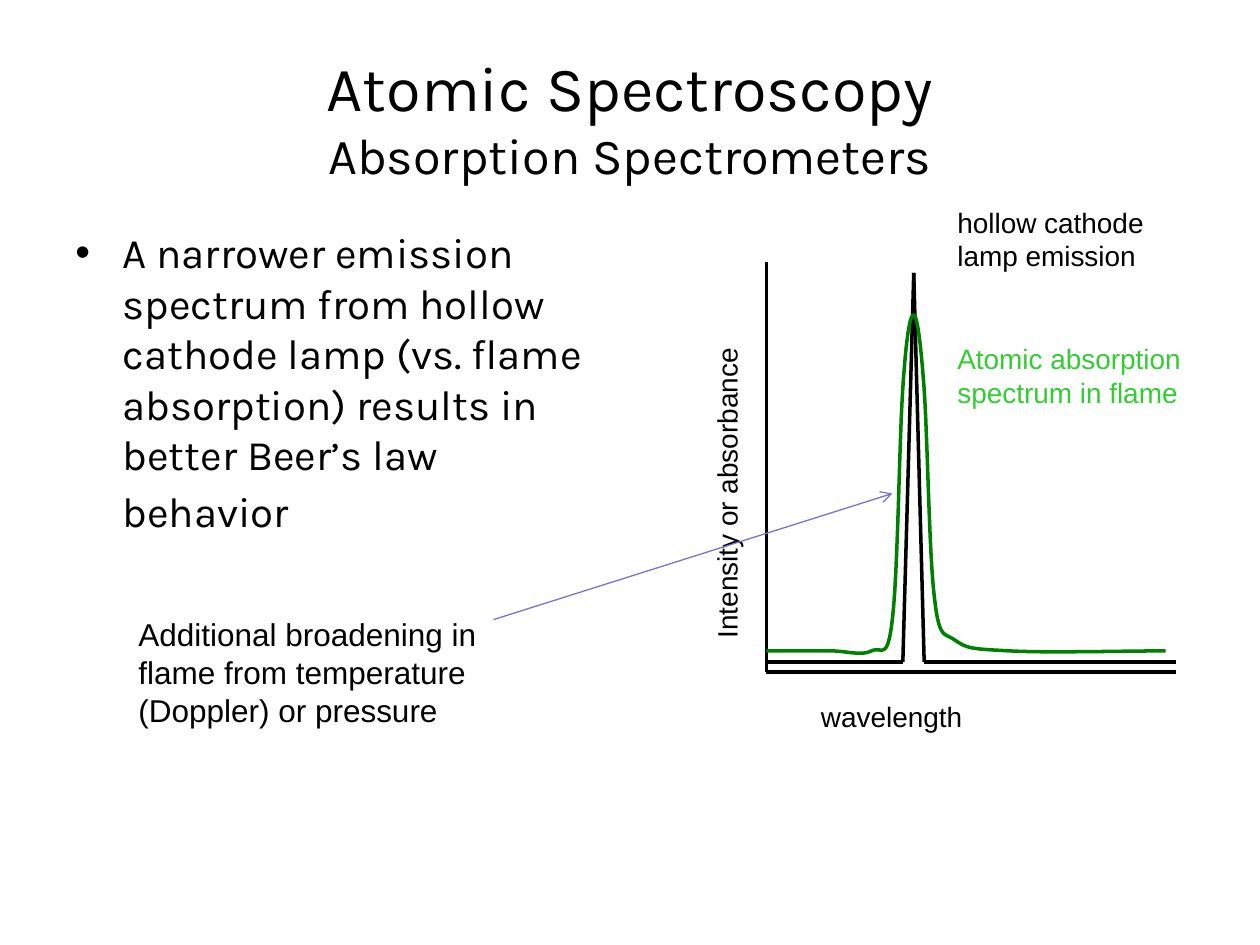
from itertools import pairwise

from lxml import etree
from pptx import Presentation
from pptx.dml.color import RGBColor
from pptx.enum.shapes import MSO_CONNECTOR as Connector
from pptx.enum.text import MSO_ANCHOR as Anchor, PP_ALIGN as Align
from pptx.oxml.ns import qn
from pptx.util import Cm, Pt

BLACK = "000000"
color = RGBColor.from_string

deck = Presentation()
deck.slide_width, deck.slide_height = Cm(25.4), Cm(19.05)
page = deck.slides.add_slide(deck.slide_layouts[6])


def add_text(*runs, at, size=16, font="Arial", fill=BLACK,
             align=Align.LEFT, anchor=Anchor.TOP, rotation=0):
    """Add a one-paragraph box; a run is a string or a (string, size) pair."""
    box = page.shapes.add_textbox(*map(Cm, at))
    box.rotation = rotation
    frame = box.text_frame
    frame.word_wrap = True
    frame.vertical_anchor = anchor
    para = frame.paragraphs[0]
    para.alignment = align
    for run in runs:
        text, run_size = (run, size) if isinstance(run, str) else run
        if text == "\n":
            para.add_line_break()
            continue
        span = para.add_run()
        span.text = text
        span.font.name = font
        span.font.size = Pt(run_size)
        span.font.color.rgb = color(fill)
    return para


def add_line(start, end, stroke=BLACK, width=2):
    line = page.shapes.add_connector(Connector.STRAIGHT, *map(Cm, start + end))
    line.line.color.rgb = color(stroke)
    line.line.width = Pt(width)
    etree.SubElement(line._element.spPr, qn("a:effectLst"))
    return line


# Title and bullet
add_text(("Atomic Spectroscopy", 36), "\n", ("Absorption Spectrometers", 28.8),
         at=(1.27, 0.76, 22.86, 3.18), font="Karla",
         align=Align.CENTER, anchor=Anchor.MIDDLE)
bullet = add_text(
    "A narrower emission spectrum from hollow cathode lamp (vs. flame "
    "absorption) results in better Beer’s law behavior", (" ", 28),
    at=(1.27, 4.45, 11.23, 12.57), size=24, font="Karla")
bullet_format = bullet._p.get_or_add_pPr()
bullet_format.set("marL", str(Cm(0.95)))
bullet_format.set("indent", str(Cm(-0.95)))
etree.SubElement(bullet_format, qn("a:buFont"), typeface="Arial")
etree.SubElement(bullet_format, qn("a:buChar"), char="•")

# Axes
left, right, axis_top, axis_bottom = 15.45, 23.71, 5.29, 13.55
add_line((left, axis_top), (left, axis_bottom))
add_line((left, axis_bottom), (right, axis_bottom))
add_text("wavelength", at=(16.3, 13.97, 4.88, 0.94))
add_text("Intensity or absorbance", at=(10.74, 8.74, 7.82, 0.94), rotation=270)

# Narrow lamp emission peak
base = 13.34
emission = [(left, base), (18.2, base), (18.42, 5.5), (18.63, base), (right, base)]
for start, end in pairwise(emission):
    add_line(start, end)
add_text("hollow cathode lamp emission", at=(19.05, 4.01, 5.51, 1.63))

# Broad flame absorption peak: cubic curves, two control points and an end each
absorption_start = (left, 13.12)
absorption_curves = [
    ((15.91, 13.12), (16.36, 13.12), (16.72, 13.12)),
    ((17.07, 13.12), (17.36, 13.23), (17.57, 13.12)),
    ((17.78, 13.02), (17.89, 13.36), (17.99, 12.49)),
    ((18.1, 11.62), (18.13, 8.87), (18.2, 7.83)),
    ((18.27, 6.8), (18.34, 6.35), (18.42, 6.35)),
    ((18.49, 6.35), (18.56, 6.88), (18.63, 7.83)),
    ((18.7, 8.79), (18.73, 11.22), (18.84, 12.07)),
    ((18.94, 12.91), (19.03, 12.74), (19.26, 12.91)),
    ((19.51, 13.08), (19.6, 13.08), (20.32, 13.12)),
    ((21.03, 13.16), (22.25, 13.13), (23.5, 13.12)),
]
STEPS = 12
points = []
knot = absorption_start
for first, second, end in absorption_curves:
    for step in range(1, STEPS + 1):
        t = step / STEPS
        weights = (1 - t) ** 3, 3 * t * (1 - t) ** 2, 3 * t**2 * (1 - t), t**3
        points.append(tuple(
            Cm(sum(weight * value for weight, value in zip(weights, values)))
            for values in zip(knot, first, second, end)))
    knot = end
builder = page.shapes.build_freeform(*map(Cm, absorption_start))
builder.add_line_segments(points, close=False)
absorption = builder.convert_to_shape()
absorption.shadow.inherit = False
absorption.fill.background()
absorption.line.color.rgb = color("008000")
absorption.line.width = Pt(2)
add_text("Atomic absorption spectrum in flame", at=(19.05, 6.77, 5.08, 1.63),
         fill="33CC33")

# Broadening remark
add_text("Additional broadening in flame from temperature (Doppler) or pressure",
         at=(2.54, 12.28, 8.46, 2.57), size=18)
arrow = add_line((9.95, 12.49), (17.99, 9.95), stroke="7575D1", width=0.75)
etree.SubElement(arrow.line._get_or_add_ln(), qn("a:tailEnd"), type="arrow")

deck.save("out.pptx")
